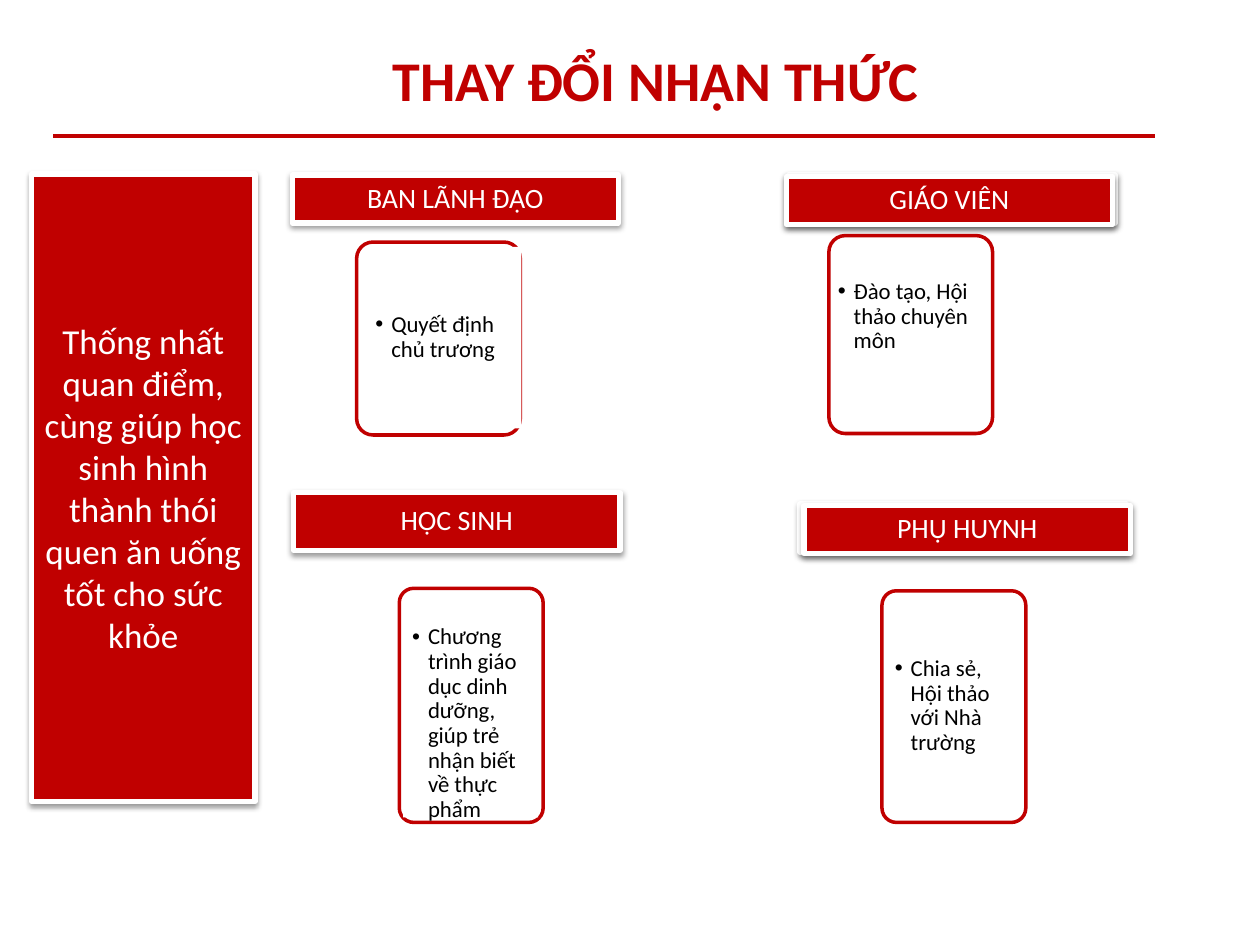
from lxml import etree
from pptx import Presentation
from pptx.dml.color import RGBColor
from pptx.enum import shapes, text
from pptx.oxml.ns import qn
from pptx.util import Cm, Pt

RED = RGBColor(0xC0, 0x00, 0x00)
TEAL = RGBColor(0x4B, 0xAC, 0xC6)
WHITE = RGBColor(0xFF, 0xFF, 0xFF)
BLACK = RGBColor(0x00, 0x00, 0x00)
FONT = "Calibri"
RECT = shapes.MSO_SHAPE.RECTANGLE
ROUND = shapes.MSO_SHAPE.ROUNDED_RECTANGLE


def add(parent, tag, **attrs):
    node = etree.SubElement(parent, qn(tag))
    for name, value in attrs.items():
        node.set(name, str(value))
    return node


def write(shape, words, size=16, color=WHITE, bold=False, align="CENTER",
          space=0.9, inset=(0.18, 0.18), bullet=False):
    """Fill a shape with one formatted paragraph."""
    frame = shape.text_frame
    frame.word_wrap = True
    frame.auto_size = text.MSO_AUTO_SIZE.NONE
    frame.vertical_anchor = text.MSO_ANCHOR.MIDDLE
    frame.margin_left = frame.margin_right = Cm(inset[0])
    frame.margin_top = frame.margin_bottom = Cm(inset[1])
    para = frame.paragraphs[0]
    para.alignment = getattr(text.PP_ALIGN, align)
    para.line_spacing = space
    para.space_before = Pt(0)
    if bullet:
        para.level = 1
        props = para._p.get_or_add_pPr()
        props.set("marL", str(Cm(0.32)))
        props.set("indent", str(-Cm(0.32)))
        add(add(props, "a:buClr"), "a:srgbClr", val=color)
        add(props, "a:buFont", typeface="Arial")
        add(props, "a:buChar", char="•")
    run = para.add_run()
    run.text = words
    font = run.font
    font.name, font.size, font.bold = FONT, Pt(size), bold
    font.color.rgb = color


def block(slide, kind, box, fill, line=None, width=0):
    shape = slide.shapes.add_shape(kind, *map(Cm, box))
    shape.shadow.inherit = False
    shape.fill.solid()
    shape.fill.fore_color.rgb = fill
    if line is None:
        shape.line.fill.background()
    else:
        shape.line.color.rgb = line
        shape.line.width = Pt(width)
    return shape


def panel(slide, box, fill=RED):
    """White-framed block with a soft shadow below it."""
    shape = block(slide, RECT, box, fill, WHITE, 3)
    effect = shape._element.spPr.find(qn("a:effectLst"))
    shade = add(effect, "a:outerShdw", blurRad=Pt(3.1), dist=Pt(1.6),
                dir=5400000, rotWithShape=0)
    add(add(shade, "a:srgbClr", val=BLACK), "a:alpha", val=38000)
    return shape


def header(slide, box):
    x, y, w, h = box
    title = slide.shapes.title
    title.left, title.top, title.width, title.height = map(Cm, box)
    write(title, "THAY ĐỔI NHẬN THỨC", size=32, color=RED, bold=True,
          space=1.0, inset=(0.25, 0.13))
    # Rule below the title
    rule = slide.shapes.add_connector(
        shapes.MSO_CONNECTOR.STRAIGHT,
        Cm(x - 0.63), Cm(y + 1.9), Cm(x + 21.59), Cm(y + 1.9))
    rule.line.color.rgb = RED
    rule.line.width = Pt(2.5)
    add(rule._element.spPr, "a:effectLst")


def side(slide, box):
    write(panel(slide, box),
          "Thống nhất quan điểm, cùng giúp học sinh hình thành thói quen "
          "ăn uống tốt cho sức khỏe",
          size=20, space=1.0, inset=(0.25, 0.13))


def group(slide, box, name, note, card, label, plate=None, solid=False):
    """Banner at box; card is relative to it, label relative to the card."""
    x, y, w, h = box
    # Banner, with an optional plate (dx, dy, fill) behind it
    if plate:
        dx, dy, fill = plate
        panel(slide, (x + dx, y + dy, w, h), fill)
    write(panel(slide, box), name)
    # Card
    dx, dy, cw, ch = card
    x, y = x + dx, y + dy
    frame = block(slide, ROUND, (x, y, cw, ch), WHITE, RED, 2)
    frame.adjustments[0] = 0.1
    # Bulleted note
    dx, dy, tw, th = label
    area = (x + dx, y + dy, tw, th)
    if solid:
        body = block(slide, RECT, area, WHITE)
    else:
        body = slide.shapes.add_textbox(*map(Cm, area))
    write(body, note, size=13, color=BLACK, align="LEFT", bullet=True)


def main():
    deck = Presentation()
    deck.slide_width, deck.slide_height = Cm(25.4), Cm(19.05)
    slide = deck.slides.add_slide(deck.slide_layouts[5])
    header(slide, (1.7, 0.84, 23.04, 1.52))
    side(slide, (0.64, 3.51, 4.5, 12.65))
    group(slide, (5.89, 3.53, 6.58, 0.97), "BAN LÃNH ĐẠO",
          "Quyết định chủ trương",
          card=(1.3, 1.35, 3.3, 3.89), label=(0.2, 0.1, 3.12, 3.66),
          solid=True)
    group(slide, (15.85, 3.56, 6.58, 0.97), "GIÁO VIÊN",
          "Đào tạo, Hội thảo chuyên môn",
          card=(0.86, 1.19, 3.3, 3.99), label=(0, -0.51, 3.2, 4.29),
          plate=(0.05, -0.03, TEAL))
    group(slide, (5.92, 9.93, 6.58, 1.17), "HỌC SINH",
          "Chương trình giáo dục dinh dưỡng, giúp trẻ nhận biết về thực phẩm",
          card=(2.13, 1.93, 2.9, 4.72), label=(0.08, 0.84, 2.72, 3.78),
          solid=True)
    group(slide, (16.21, 10.19, 6.58, 0.97), "PHỤ HUYNH",
          "Chia sẻ, Hội thảo với Nhà trường",
          card=(1.57, 1.72, 2.9, 4.67), label=(0.08, 0.13, 2.72, 4.39),
          plate=(-0.08, -0.03, RED))
    deck.save("out.pptx")


if __name__ == "__main__":
    main()
